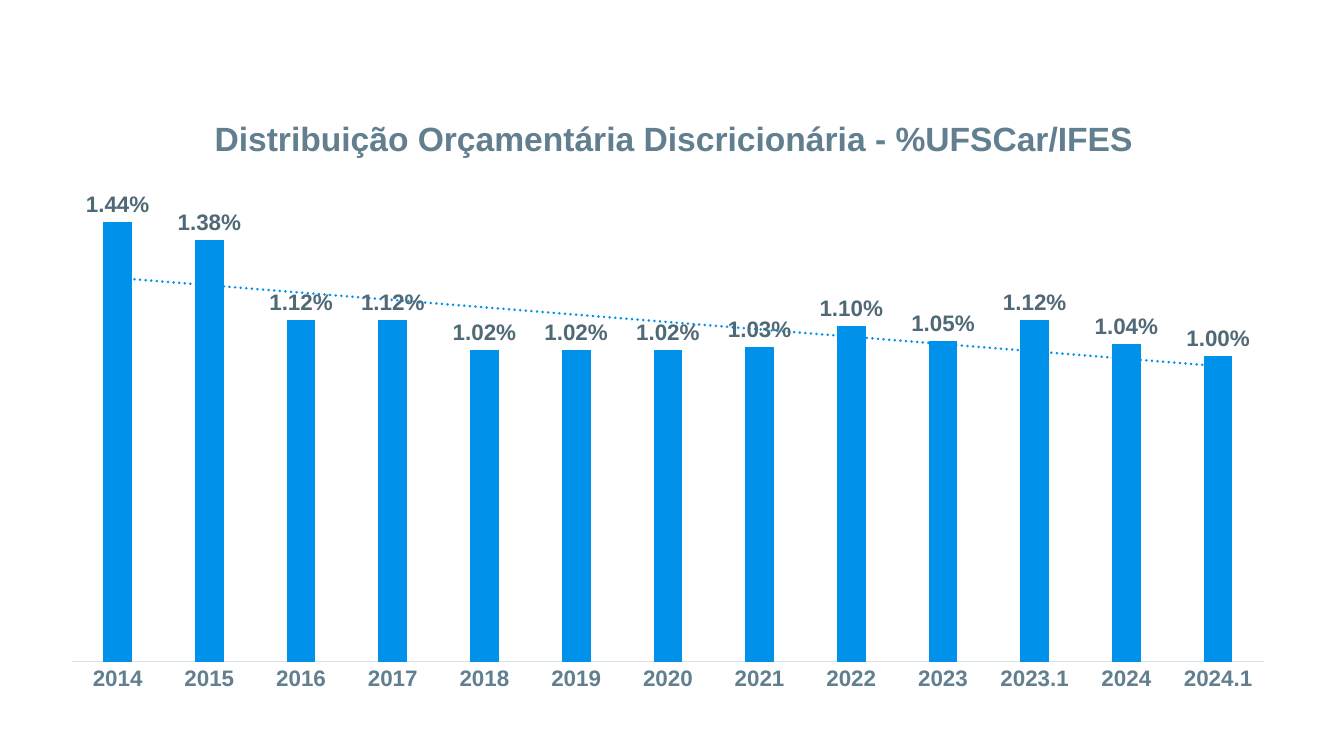
"""Builds a slide with a column chart of a university's budget share and its trend."""
from lxml.etree import fromstring
from pptx import Presentation
from pptx.chart.data import CategoryChartData as ChartData
from pptx.dml.color import RGBColor as RGB
from pptx.enum.chart import XL_CHART_TYPE as CT, XL_LABEL_POSITION as LP, XL_TICK_MARK as TM
from pptx.util import Pt

NS = "http://schemas.openxmlformats.org/drawingml/2006"
COLORS = {"bar": "0091EA", "text": "263238", "title": "617F8F",
          "label": "506976", "axis": "DAE2E6"}
SHARES = {"2014": 0.0144, "2015": 0.0138, "2016": 0.0112, "2017": 0.0112,
          "2018": 0.0102, "2019": 0.0102, "2020": 0.0102, "2021": 0.0103,
          "2022": 0.011, "2023": 0.0105, "2023.1": 0.0112, "2024": 0.0104,
          "2024.1": 0.01}


class Deck:
    def __init__(self, prs, colors, font):
        self.prs, self.colors, self.font = prs, colors, font
        self.s = prs.slides.add_slide(prs.slide_layouts[6])

    def set(self, obj, **values):
        for name, value in values.items():
            setattr(obj, name, value)

    def style(self, font, size, color, bold=True):
        self.set(font, name=self.font, size=Pt(size), bold=bold)
        font.color.rgb = RGB.from_string(self.colors[color])

    def layout(self, parent, **places):
        target = "" if "w" not in places else '<c:layoutTarget val="inner"/>'
        modes = "".join(f'<c:{k}Mode val="edge"/>' for k in "xy")
        values = "".join(f'<c:{k} val="{v}"/>' for k, v in places.items())
        for old in parent.findall(f"{{{NS}/chart}}layout"):
            parent.remove(old)
        return fromstring(f'<c:layout xmlns:c="{NS}/chart"><c:manualLayout>{target}{modes}'
                          f'{values}</c:manualLayout></c:layout>')

    def chart(self, data, box):
        chart = self.s.shapes.add_chart(CT.COLUMN_CLUSTERED, *map(Pt, box), data).chart
        self.style(chart.font, 10, "text", False)
        chart.has_legend = False
        self.set(chart.plots[0], gap_width=219, overlap=-27, vary_by_categories=False)
        return chart

    def title(self, chart, text, **places):
        tf = chart.chart_title.text_frame
        r = tf.paragraphs[0].add_run()
        r.text = text
        self.style(r.font, 18, "title")
        chart.chart_title.include_in_layout = False
        title = tf._txBody.getparent().getparent()
        title.insert(1, self.layout(title, **places))

    def axes(self, chart, top, **places):
        cat, val = chart.category_axis, chart.value_axis
        self.set(cat, major_tick_mark=TM.NONE, minor_tick_mark=TM.NONE,
                 has_major_gridlines=False)
        self.style(cat.tick_labels.font, 12, "title")
        cat.format.line.color.rgb = RGB.from_string(self.colors["axis"])
        cat.format.line.width = Pt(0.75)
        self.set(val, minimum_scale=0, maximum_scale=top,
                 has_major_gridlines=False, visible=False)
        plot_area = chart.plots[0]._element.getparent()
        plot_area.insert(0, self.layout(plot_area, **places))

    def series(self, ser, color):
        ser.format.fill.solid()
        ser.format.fill.fore_color.rgb = RGB.from_string(self.colors[color])
        ser.invert_if_negative = False
        labels = ser.data_labels
        self.set(labels, show_value=True, number_format="0.00%",
                 number_format_is_linked=False, position=LP.OUTSIDE_END)
        self.style(labels.font, 12, "label")

    def trend(self, ser, color):
        line = fromstring(
            f'<c:trendline xmlns:c="{NS}/chart" xmlns:a="{NS}/main"><c:spPr>'
            f'<a:ln w="{Pt(1.5)}" cap="rnd"><a:solidFill>'
            f'<a:srgbClr val="{self.colors[color]}"/></a:solidFill>'
            '<a:prstDash val="sysDot"/></a:ln></c:spPr>'
            '<c:trendlineType val="linear"/><c:dispRSqr val="0"/><c:dispEq val="0"/>'
            '</c:trendline>')
        ser._element.find(f"{{{NS}/chart}}cat").addprevious(line)


def main():
    prs = Presentation()
    prs.slide_width, prs.slide_height = Pt(720), Pt(405)
    deck = Deck(prs, COLORS, "Arial")
    data = ChartData(number_format="0.00%")
    data.categories = list(SHARES)
    data.add_series("Series 1", list(SHARES.values()))
    chart = deck.chart(data, (25.2, 42.5, 665.3, 335.5))
    deck.title(chart, "Distribuição Orçamentária Discricionária - %UFSCar/IFES", x=0.13, y=0.05)
    deck.axes(chart, 0.016, x=0.02, y=0.15, w=0.96, h=0.78)
    ser = chart.plots[0].series[0]
    deck.series(ser, "bar")
    deck.trend(ser, "bar")
    prs.save("out.pptx")


if __name__ == "__main__":
    main()
